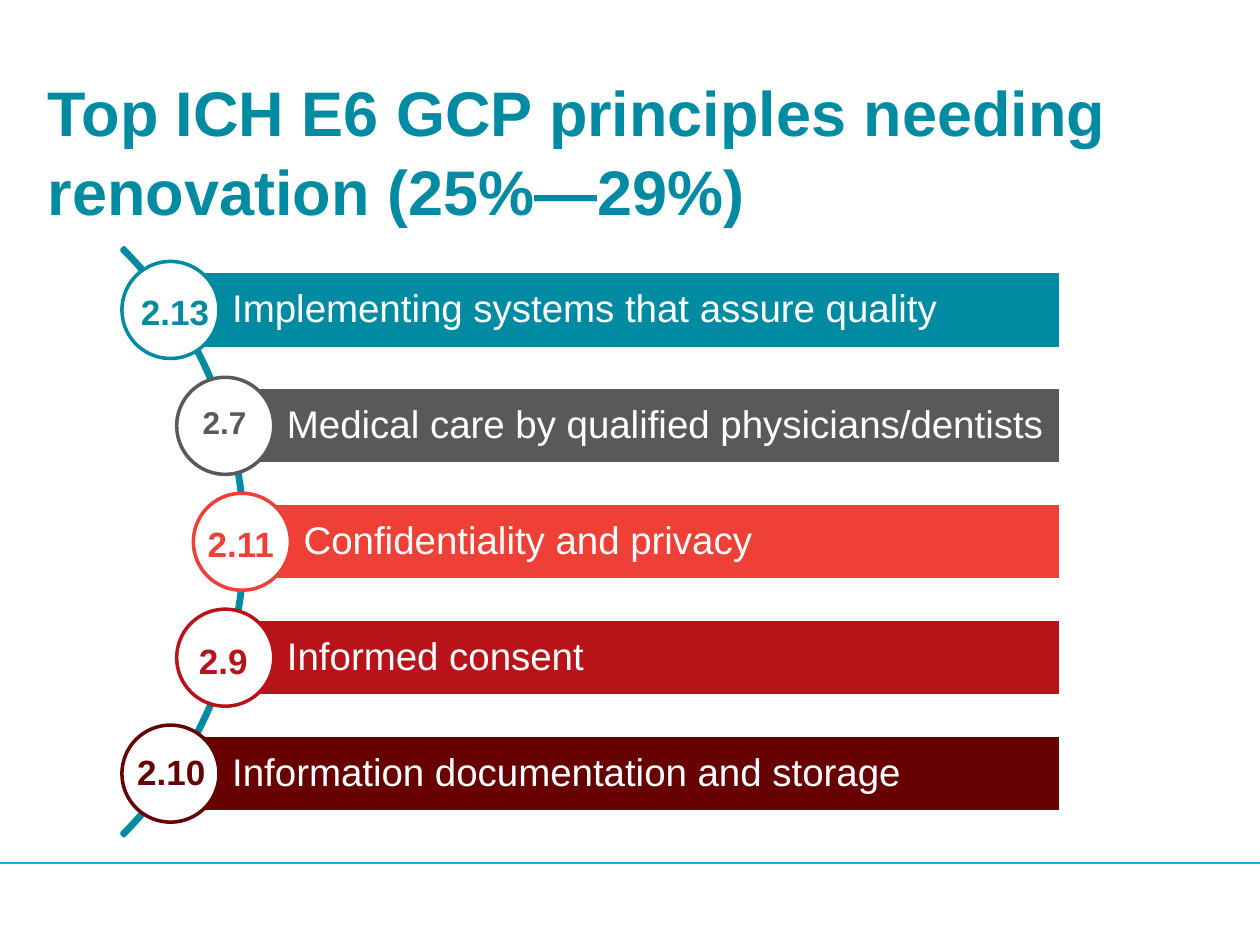
from math import sqrt

from pptx import Presentation
from pptx.dml.color import RGBColor
from pptx.enum.shapes import MSO_CONNECTOR, MSO_SHAPE
from pptx.enum.text import MSO_ANCHOR, MSO_AUTO_SIZE, PP_ALIGN
from pptx.oxml import parse_xml
from pptx.oxml.ns import nsdecls
from pptx.util import Inches, Pt

TEAL = "008BA2"
WHITE = "FFFFFF"


def color(value):
    return RGBColor.from_string(value)


def write(frame, text, size, ink, bold=False):
    frame.text = text
    font = frame.paragraphs[0].runs[0].font
    font.name, font.size, font.bold = "Arial", Pt(size), bold
    font.color.rgb = color(ink)


prs = Presentation()
prs.slide_width, prs.slide_height = Inches(10), Inches(7.5)
slide = prs.slides.add_slide(prs.slide_layouts[5])
shapes = slide.shapes

footer_rule = shapes.add_connector(
    MSO_CONNECTOR.STRAIGHT, 0, Inches(6.85), prs.slide_width, Inches(6.85))
footer_rule.line.color.rgb = color("00B7D5")
footer_rule.line.width = Pt(0.75)
footer_rule._element.spPr.append(parse_xml(f"<a:effectLst {nsdecls('a')}/>"))

title = shapes.title
title.left, title.top = Inches(0.38), Inches(0.76)
title.width, title.height = Inches(9.25), Inches(0.84)
heading = title.text_frame
heading.margin_left = heading.margin_right = 0
heading.margin_top = heading.margin_bottom = 0
heading.vertical_anchor = MSO_ANCHOR.MIDDLE
heading.auto_size = MSO_AUTO_SIZE.NONE
write(heading, "Top ICH E6 GCP principles needing renovation (25%—29%)", 36, TEAL, True)
heading.paragraphs[0].alignment = PP_ALIGN.LEFT
heading.paragraphs[0].line_spacing = 1.05

arc_x, arc_y, radius = -1.35, 4.3, 3.3
arc = shapes.add_shape(
    MSO_SHAPE.BLOCK_ARC, Inches(arc_x - radius), Inches(arc_y - radius),
    Inches(2 * radius), Inches(2 * radius))
arc.adjustments[0], arc.adjustments[1], arc.adjustments[2] = 189, 27, 0.004
arc.shadow.inherit = False
arc.fill.background()
arc.line.color.rgb = color(TEAL)
arc.line.width = Pt(2)

principles = [
    ("2.13", "Implementing systems that assure quality", TEAL, 20, 1.02, 2.26, 0.75),
    ("2.7", "Medical care by qualified physicians/dentists", "58595B", 18, 1.51, 3.15, 0.55),
    ("2.11", "Confidentiality and privacy", "EE4036", 20, 1.55, 4.1, 0.73),
    ("2.9", "Informed consent", "B9131A", 20, 1.48, 5.03, 0.59),
    ("2.10", "Information documentation and storage", "670001", 20, 0.99, 5.91, 0.75),
]
row_pitch, bar_height, bar_right, circle_size = 0.92, 0.61, 8.42, 0.77

for row, (number, principle, hue, size, left, top, width) in enumerate(principles):
    offset = (row - 2) * row_pitch
    center_x = arc_x + sqrt((radius - 0.03) ** 2 - offset ** 2)
    center_y = arc_y + offset

    bar = shapes.add_shape(
        MSO_SHAPE.RECTANGLE, Inches(center_x), Inches(center_y - bar_height / 2),
        Inches(bar_right - center_x), Inches(bar_height))
    circle = shapes.add_shape(
        MSO_SHAPE.OVAL, Inches(center_x - circle_size / 2),
        Inches(center_y - circle_size / 2), Inches(circle_size), Inches(circle_size))
    for part, fill, outline in ((bar, hue, WHITE), (circle, WHITE, hue)):
        part.shadow.inherit = False
        part.fill.solid()
        part.fill.fore_color.rgb = color(fill)
        part.line.color.rgb = color(outline)
        part.line.width = Pt(2)

    wording = bar.text_frame
    wording.margin_left = Inches(0.49)
    wording.margin_top = wording.margin_right = wording.margin_bottom = Inches(0.06)
    wording.vertical_anchor = MSO_ANCHOR.MIDDLE
    write(wording, principle, 22, WHITE)
    wording.paragraphs[0].alignment = PP_ALIGN.LEFT
    wording.paragraphs[0].line_spacing = 0.9

    label = shapes.add_textbox(
        Inches(left), Inches(top), Inches(width), Inches(size * 0.022))
    label.text_frame.word_wrap = False
    label.text_frame.auto_size = MSO_AUTO_SIZE.SHAPE_TO_FIT_TEXT
    write(label.text_frame, number, size, hue, True)

prs.save("out.pptx")
